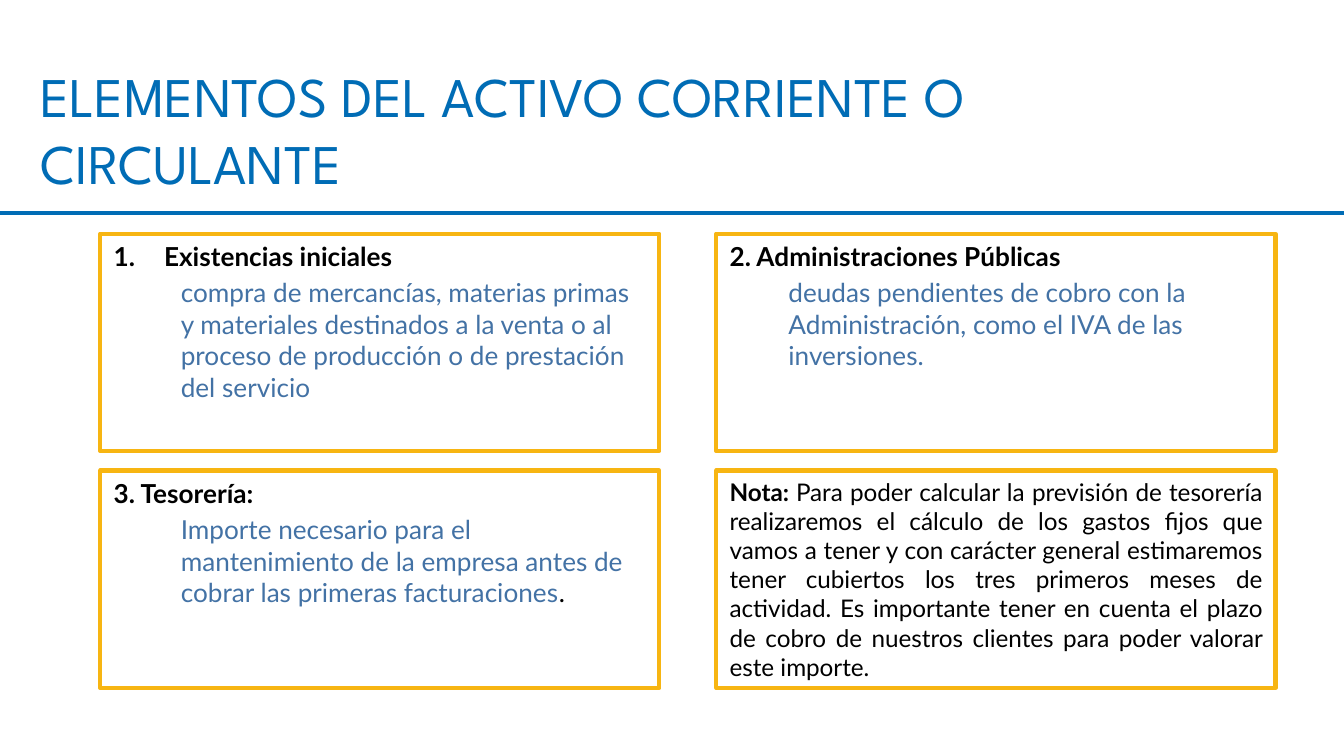
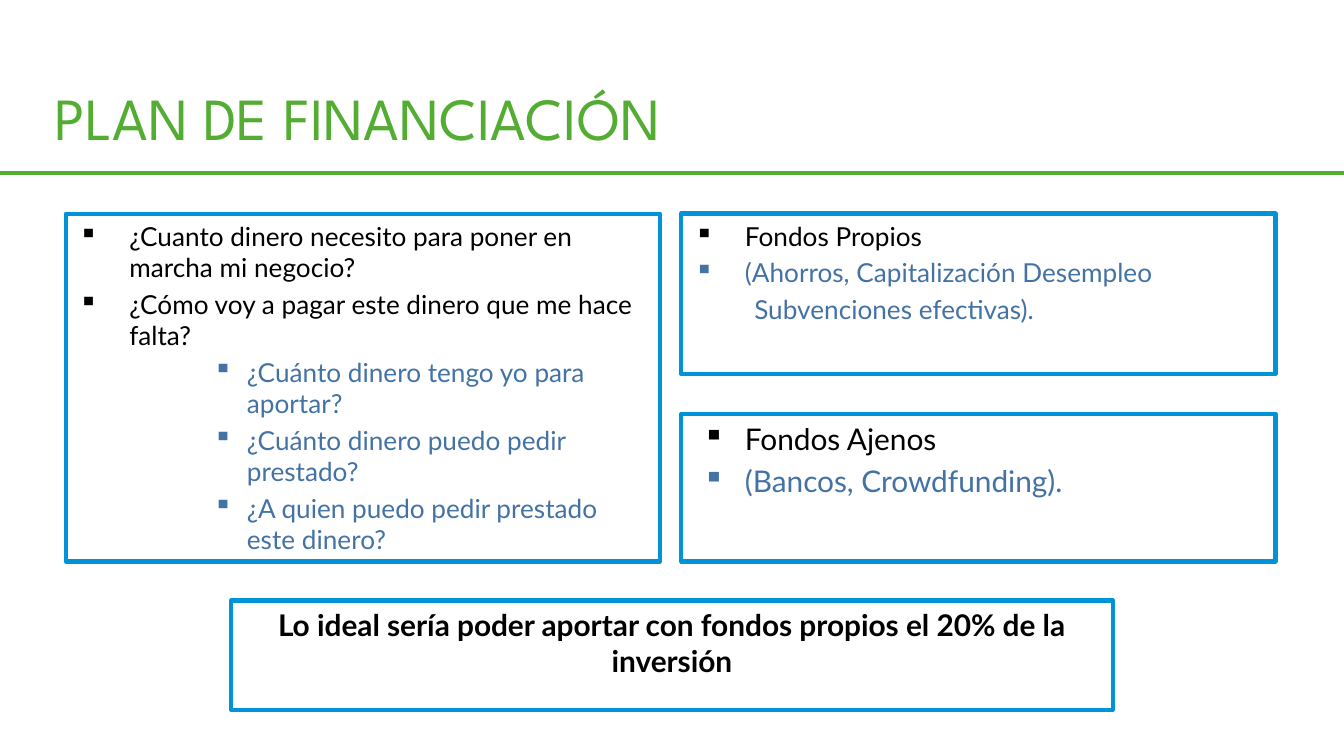
"""Two slides on current assets and the financing plan of a business."""
from lxml import etree
from pptx import Presentation
from pptx.dml.color import RGBColor
from pptx.enum.shapes import MSO_CONNECTOR, MSO_SHAPE
from pptx.enum.text import MSO_ANCHOR, PP_ALIGN
from pptx.oxml.ns import qn
from pptx.util import Pt

BLACK = RGBColor(0x00, 0x00, 0x00)
STEEL = RGBColor(0x43, 0x72, 0xA5)
BLUE = RGBColor(0x00, 0x6C, 0xB5)
GREEN = RGBColor(0x53, 0xAD, 0x32)
AMBER = RGBColor(0xF7, 0xB5, 0x12)
SKY = RGBColor(0x00, 0x93, 0xD6)
LEFT, CENTER, JUSTIFY = PP_ALIGN.LEFT, PP_ALIGN.CENTER, PP_ALIGN.JUSTIFY
RECTANGLE, STRAIGHT, TOP = MSO_SHAPE.RECTANGLE, MSO_CONNECTOR.STRAIGHT, MSO_ANCHOR.TOP
BODY_FONT, TITLE_FONT = "Lato", "League Spartan"
WIDTH, HEIGHT = 720, 398.25
NUMBER, SQUARE = "1.", "▪"


def add_run(paragraph, text, font, size, color, bold=False):
    run = paragraph.add_run()
    run.text = text
    run.font.name = font
    run.font.size = Pt(size)
    run.font.bold = bold
    run.font.color.rgb = color


def add_box(slide, bounds, border, size, paragraphs, align=LEFT):
    box = slide.shapes.add_shape(RECTANGLE, *[Pt(length) for length in bounds])
    box.shadow.inherit = False
    box.fill.background()
    box.line.color.rgb = border
    box.line.width = Pt(2.25)
    frame = box.text_frame
    frame.word_wrap = True
    frame.vertical_anchor = TOP
    for index, (margin, indent, bullet, runs) in enumerate(paragraphs):
        paragraph = frame.add_paragraph() if index else frame.paragraphs[0]
        paragraph.alignment = align
        paragraph.space_before = Pt(size * 0.2)
        properties = paragraph._p.get_or_add_pPr()
        properties.set("marL", str(Pt(margin)))
        properties.set("indent", str(Pt(indent)))
        if bullet == NUMBER:
            etree.SubElement(properties, qn("a:buAutoNum"), type="arabicPeriod")
        elif bullet:
            etree.SubElement(properties, qn("a:buChar"), char=bullet)
        for text, color, bold in runs:
            add_run(paragraph, text, BODY_FONT, size, color, bold)


deck = Presentation()
deck.slide_width, deck.slide_height = Pt(WIDTH), Pt(HEIGHT)

HEADINGS = [
    ("ELEMENTOS DEL ACTIVO CORRIENTE O CIRCULANTE", 30, BLUE, (14.4, 29.5, 659, 80), 114.2),
    ("PLAN DE FINANCIACIÓN", 32, GREEN, (22.3, 39.6, 659, 46), 92.7),
]
slides = []
for title, title_size, color, bounds, rule_y in HEADINGS:
    slide = deck.slides.add_slide(deck.slide_layouts[6])
    heading = slide.shapes.add_textbox(*[Pt(length) for length in bounds]).text_frame
    heading.word_wrap = True
    add_run(heading.paragraphs[0], title, TITLE_FONT, title_size, color)
    rule = slide.shapes.add_connector(STRAIGHT, 0, Pt(rule_y), Pt(WIDTH), Pt(rule_y))
    rule.line.color.rgb = color
    rule.line.width = Pt(2)
    etree.SubElement(rule._element.spPr, qn("a:effectLst"))
    slides.append(slide)
assets, financing = slides

ASSET_CARDS = [
    (14, LEFT, [
        (27, -27, NUMBER, [("Existencias iniciales", BLACK, True)]),
        (36, 0, None, [("compra de mercancías, materias primas y materiales destinados a la venta "
                        "o al proceso de producción o de prestación del servicio", STEEL, False)]),
    ]),
    (14, LEFT, [
        (0, 0, None, [("2. Administraciones Públicas", BLACK, True)]),
        (31.5, 0, None, [("deudas pendientes de cobro con la Administración, como el IVA de las "
                          "inversiones.", STEEL, False)]),
    ]),
    (14, LEFT, [
        (0, 0, None, [("3. Tesorería:", BLACK, True)]),
        (36, 0, None, [("Importe necesario para el mantenimiento de la empresa antes de cobrar "
                        "las primeras facturaciones", STEEL, False), (".", BLACK, False)]),
    ]),
    (13, JUSTIFY, [
        (0, 0, None, [("Nota: ", BLACK, True),
                      ("Para poder calcular la previsión de tesorería realizaremos el cálculo de "
                       "los gastos fijos que vamos a tener y con carácter general estimaremos tener "
                       "cubiertos los tres primeros meses de actividad. Es importante tener en "
                       "cuenta el plazo de cobro de nuestros clientes para poder valorar este "
                       "importe.", BLACK, False)]),
    ]),
]
CARD_W, CARD_H, GAP_X, GAP_Y = 299.5, 116.6, 30.5, 10.4
for index, (size, align, paragraphs) in enumerate(ASSET_CARDS):
    row, column = divmod(index, 2)
    bounds = (53.8 + column * (CARD_W + GAP_X), 125.2 + row * (CARD_H + GAP_Y), CARD_W, CARD_H)
    add_box(assets, bounds, AMBER, size, paragraphs, align)

questions = [(27, -27, SQUARE, [(text, BLACK, False)]) for text in (
    "¿Cuanto dinero necesito para poner en marcha mi negocio?",
    "¿Cómo voy a pagar este dinero que me hace falta?")]
questions += [(90, -18, SQUARE, [(text, STEEL, False)]) for text in (
    "¿Cuánto dinero tengo yo para aportar?",
    "¿Cuánto dinero puedo pedir prestado?",
    "¿A quien puedo pedir prestado este dinero?")]
own_funds = [
    (27, -27, SQUARE, [("Fondos Propios", BLACK, False)]),
    (27, -27, SQUARE, [("(Ahorros, Capitalización Desempleo", STEEL, False)]),
    (32, 0, None, [("Subvenciones efectivas).", STEEL, False)]),
]
outside_funds = [
    (27, -22.5, SQUARE, [("Fondos Ajenos", BLACK, False)]),
    (27, -22.5, SQUARE, [("(Bancos, Crowdfunding).", STEEL, False)]),
]
advice = [(0, 0, None, [("Lo ideal sería poder aportar con fondos propios el 20% de la inversión",
                         BLACK, True)])]

PANEL_W, PANEL_TOP, FUNDS_X = 318.3, 114.5, 365
add_box(financing, (35.2, PANEL_TOP, PANEL_W, 186.5), SKY, 14, questions)
add_box(financing, (FUNDS_X, PANEL_TOP, PANEL_W, 86), SKY, 14, own_funds)
add_box(financing, (FUNDS_X, 221.8, PANEL_W, 79.2), SKY, 16, outside_funds)
add_box(financing, (123.8, 321.9, 472.4, 58.5), SKY, 16, advice, CENTER)

deck.save("out.pptx")
